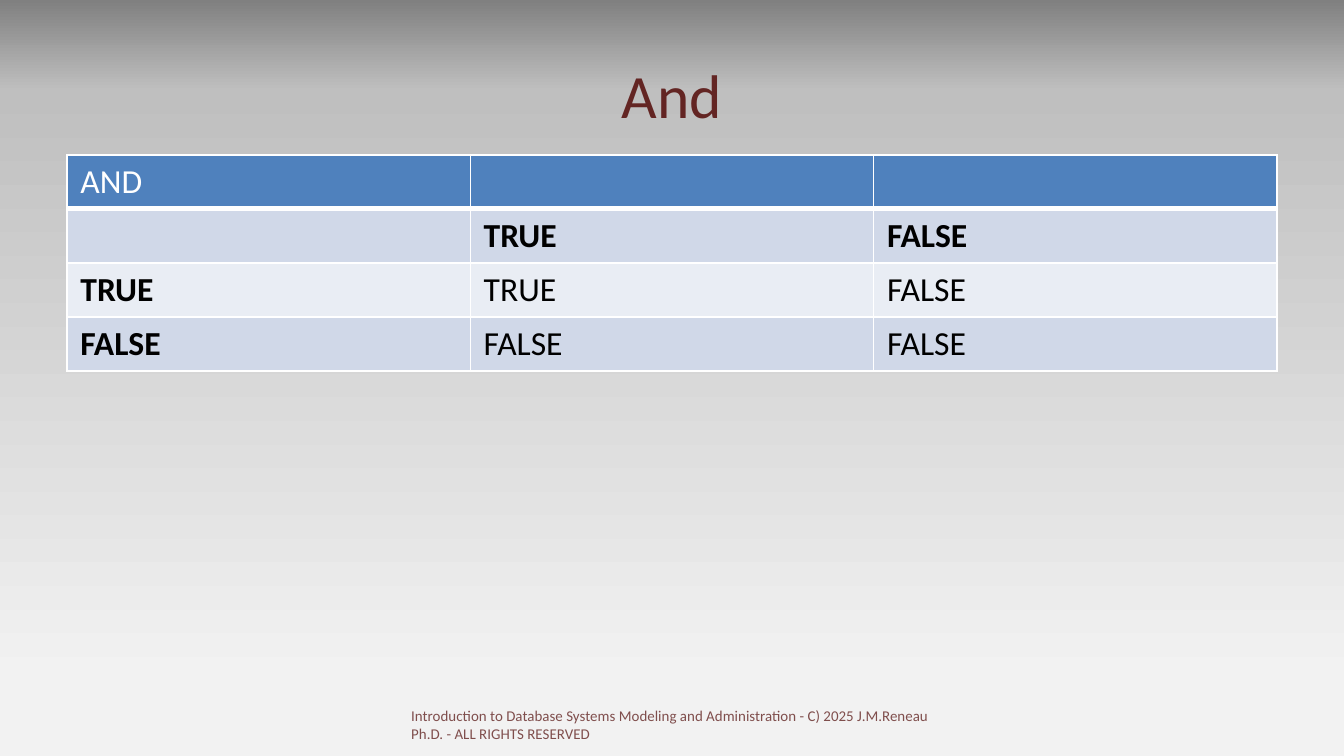
from copy import deepcopy

from lxml.etree import SubElement
from pptx import Presentation
from pptx.dml.color import RGBColor
from pptx.enum.text import MSO_ANCHOR, PP_ALIGN
from pptx.oxml.ns import qn
from pptx.util import Emu, Pt

FONT = "Calibri"
MAROON = RGBColor(0x63, 0x25, 0x23)
WHITE = RGBColor(0xFF, 0xFF, 0xFF)
BLACK = RGBColor(0x00, 0x00, 0x00)
HEADER_BLUE = RGBColor(0x4F, 0x81, 0xBD)
BAND_DARK = RGBColor(0xD0, 0xD8, 0xE8)
BAND_LIGHT = RGBColor(0xE9, 0xED, 0xF4)
BACKGROUND_STOPS = [
    (0, RGBColor(0x80, 0x80, 0x80)),
    (0.12, RGBColor(0xBF, 0xBF, 0xBF)),
    (0.9, RGBColor(0xF2, 0xF2, 0xF2)),
]

TRUTH_TABLE = [
    ["AND", "", ""],
    ["", "TRUE", "FALSE"],
    ["TRUE", "TRUE", "FALSE"],
    ["FALSE", "FALSE", "FALSE"],
]


def px(length):
    return Emu(round(length * 914400 / 134.4))


def set_background(page):
    fill = page.background.fill
    fill.gradient()
    fill.gradient_angle = 270  # counter-clockwise, so top to bottom
    stop_list = page.element.find(".//" + qn("a:gsLst"))
    stop_list.append(deepcopy(stop_list[-1]))
    for stop, (position, color) in zip(fill.gradient_stops, BACKGROUND_STOPS):
        stop.position = position
        stop.color.rgb = color


def style_font(para, size, color, bold=False):
    font = para.font
    font.name = FONT
    font.size = Pt(size)
    font.bold = bold
    font.color.rgb = color


def add_text(page, text, left, top, width, height, size):
    box = page.shapes.add_textbox(px(left), px(top), px(width), px(height))
    box.text_frame.word_wrap = True
    para = box.text_frame.paragraphs[0]
    para.text = text
    style_font(para, size, MAROON)
    return box


def set_borders(cell, bottom_width):
    properties = cell._tc.get_or_add_tcPr()
    widths = {"a:lnL": 1, "a:lnR": 1, "a:lnT": 1, "a:lnB": bottom_width}
    for index, (tag, width) in enumerate(widths.items()):
        line = properties.makeelement(qn(tag), {"w": str(Pt(width))})
        fill = SubElement(line, qn("a:solidFill"))
        SubElement(fill, qn("a:srgbClr"), val=str(WHITE))
        properties.insert(index, line)  # borders come before the cell fill


def add_truth_table(page, left, top, width, row_height):
    rows, columns = len(TRUTH_TABLE), len(TRUTH_TABLE[0])
    frame = page.shapes.add_table(
        rows, columns, px(left), px(top), px(width), px(row_height * rows))
    for r, values in enumerate(TRUTH_TABLE):
        is_header = r == 0
        band = BAND_DARK if r % 2 else BAND_LIGHT
        for c, value in enumerate(values):
            cell = frame.table.cell(r, c)
            cell.text = value
            cell.fill.solid()
            cell.fill.fore_color.rgb = HEADER_BLUE if is_header else band
            is_label = not is_header and (r == 1 or c == 0)
            style_font(cell.text_frame.paragraphs[0], 18,
                       WHITE if is_header else BLACK, is_label)
            set_borders(cell, 3 if is_header else 1)


def main():
    deck = Presentation()
    deck.slide_width, deck.slide_height = px(1344), px(756)
    page = deck.slides.add_slide(deck.slide_layouts[6])
    set_background(page)

    # Title
    title = add_text(page, "And", 67, 31, 1210, 126, 33)
    title.text_frame.vertical_anchor = MSO_ANCHOR.MIDDLE
    title.text_frame.paragraphs[0].alignment = PP_ALIGN.CENTER

    # Truth table
    add_truth_table(page, 67, 155, 1210, 54)

    # Copyright line, slightly transparent
    footer = add_text(
        page,
        "Introduction to Database Systems Modeling and Administration - "
        "C) 2025 J.M.Reneau Ph.D. - ALL RIGHTS RESERVED",
        398, 700, 546, 40, 8)
    color = footer.element.find(".//" + qn("a:srgbClr"))
    SubElement(color, qn("a:alpha"), val="80000")

    deck.save("out.pptx")


if __name__ == "__main__":
    main()
